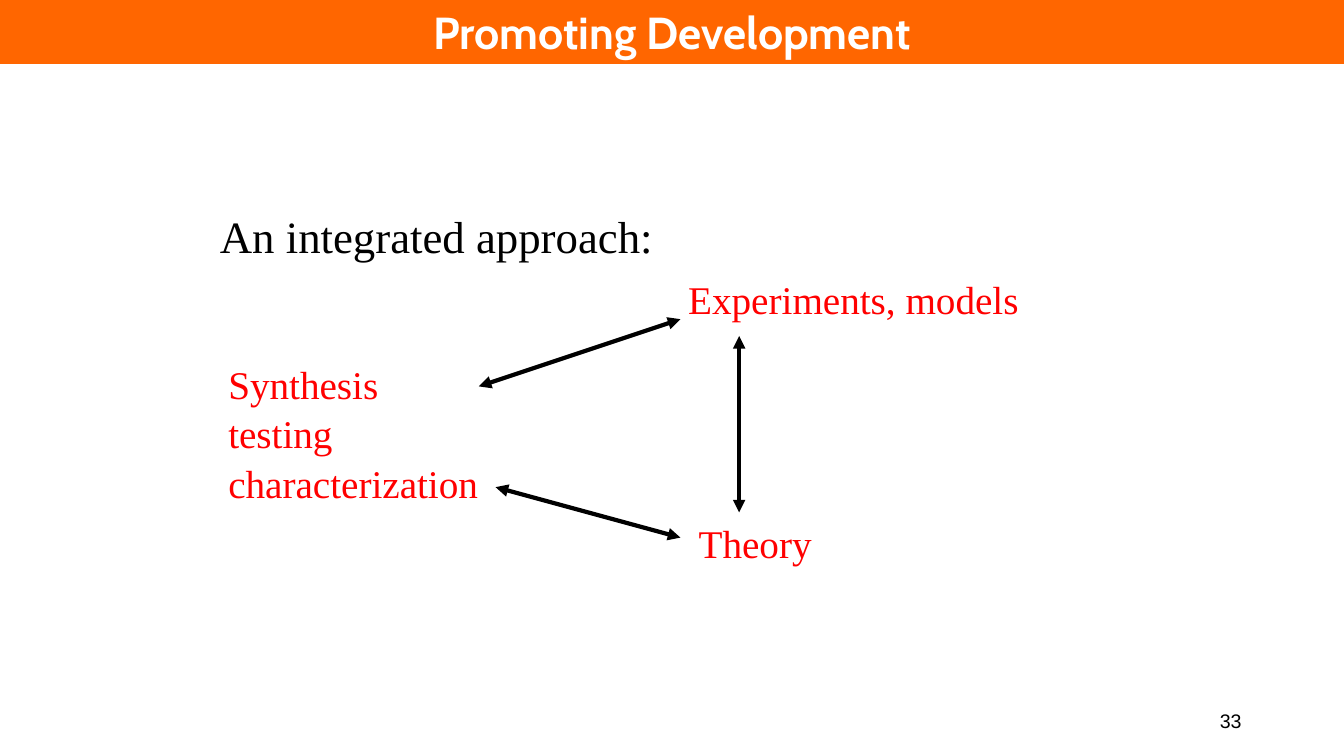
from pptx import Presentation
from pptx.dml.color import RGBColor
from pptx.enum.shapes import MSO_CONNECTOR, MSO_SHAPE
from pptx.enum.text import MSO_ANCHOR, MSO_AUTO_SIZE, PP_ALIGN
from pptx.oxml.ns import qn
from pptx.util import Emu, Pt
from lxml.etree import SubElement

ORANGE = RGBColor(0xFF, 0x66, 0x00)
RED = RGBColor(0xFF, 0x00, 0x00)
BLACK = RGBColor(0x00, 0x00, 0x00)
WHITE = RGBColor(0xFF, 0xFF, 0xFF)
SERIF = "Times New Roman"


def px(n):
    return Emu(n * 9525)


class SlideBuilder:
    def __init__(self, prs):
        self.s = prs.slides.add_slide(prs.slide_layouts[6])

    def set_text(self, tf, text, size, color, font, align=PP_ALIGN.LEFT, bold=False, spacing=None):
        tf.text = text
        for p in tf.paragraphs:
            p.alignment = align
            p.line_spacing = spacing
            for r in p.runs:
                r.font.name = font
                r.font.size = Pt(size)
                r.font.bold = bold
                r.font.color.rgb = color

    def label(self, x, y, w, h, text, size=28, color=RED):
        tf = self.s.shapes.add_textbox(px(x), px(y), px(w), px(h)).text_frame
        tf.word_wrap = False
        tf.auto_size = MSO_AUTO_SIZE.SHAPE_TO_FIT_TEXT
        self.set_text(tf, text, size, color, SERIF, spacing=1.05)

    def page_number(self, x, y, w, h, text):
        tf = self.s.shapes.add_textbox(px(x), px(y), px(w), px(h)).text_frame
        tf.word_wrap = True
        tf.vertical_anchor = MSO_ANCHOR.MIDDLE
        self.set_text(tf, text, 14, BLACK, "Arial", PP_ALIGN.RIGHT)

    def banner(self, w, h, text):
        sp = self.s.shapes.add_shape(MSO_SHAPE.RECTANGLE, 0, 0, px(w), px(h))
        sp.shadow.inherit = False
        sp.fill.solid()
        sp.fill.fore_color.rgb = ORANGE
        sp.line.fill.background()
        tf = sp.text_frame
        tf.word_wrap = True
        tf.vertical_anchor = MSO_ANCHOR.TOP
        tf.auto_size = MSO_AUTO_SIZE.SHAPE_TO_FIT_TEXT
        self.set_text(tf, text, 32, WHITE, "Cabin", PP_ALIGN.CENTER, True)

    def double_arrow(self, x1, y1, x2, y2):
        c = self.s.shapes.add_connector(MSO_CONNECTOR.STRAIGHT, px(x1), px(y1), px(x2), px(y2))
        c.line.color.rgb = BLACK
        c.line.width = Pt(3)
        spPr = c.element.spPr
        ln = spPr.find(qn("a:ln"))
        for end in ("a:headEnd", "a:tailEnd"):
            SubElement(ln, qn(end), type="triangle")
        SubElement(spPr, qn("a:effectLst"))


def main():
    prs = Presentation()
    prs.slide_width, prs.slide_height = px(1280), px(720)
    b = SlideBuilder(prs)
    b.page_number(904, 667, 288, 38, "33")
    b.label(208, 336, 257, 144, "Synthesis\ntesting\ncharacterization")
    b.label(646, 255, 334, 55, "Experiments, models")
    b.label(656, 488, 127, 55, "Theory")
    b.double_arrow(472, 464, 648, 512)
    b.double_arrow(704, 320, 704, 488)
    b.double_arrow(456, 368, 648, 304)
    b.label(200, 192, 432, 60, "An integrated approach:", 32, BLACK)
    b.banner(1280, 61, "Promoting Development")
    prs.save("out.pptx")


if __name__ == "__main__":
    main()
